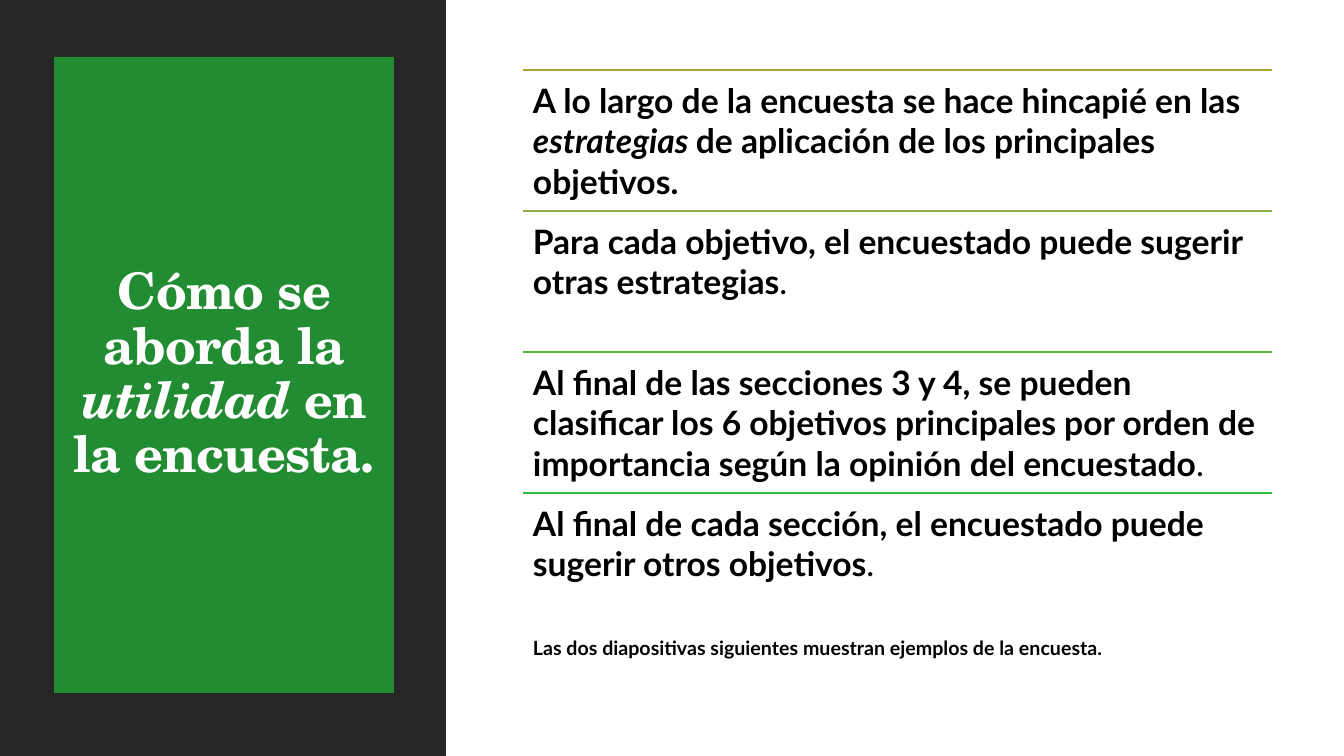
"""Builds the slide on how the survey deals with usefulness."""
from lxml import etree
from pptx import Presentation
from pptx.dml.color import RGBColor
from pptx.enum.shapes import MSO_CONNECTOR, MSO_SHAPE
from pptx.enum.text import MSO_ANCHOR, PP_ALIGN
from pptx.oxml.ns import qn
from pptx.util import Emu, Pt

RECT = MSO_SHAPE.RECTANGLE
LINE = MSO_CONNECTOR.STRAIGHT
TOP, MIDDLE = MSO_ANCHOR.TOP, MSO_ANCHOR.MIDDLE
LEFT, CENTER = PP_ALIGN.LEFT, PP_ALIGN.CENTER

SIZE = (1344, 756)
PANEL = ((0, 0, 446, 756), "262626")
CARD = ((54, 57, 340, 636), "228C32")
TITLE = [("Cómo se aborda la ", "b"), ("utilidad ", "bi"), ("en la encuesta.", "b")]
ROWS = [
    ("AEA33A", [("A lo largo de la encuesta se hace hincapié en las ", "b"),
                ("estrategias ", "bi"),
                ("de aplicación de los principales objetivos.", "b")]),
    ("8CAB4A", [("Para cada objetivo, el encuestado puede sugerir otras estrategias", "b"),
                (".", "")]),
    ("57B636", [("Al final de las secciones 3 y 4, se pueden clasificar los 6 objetivos "
                 "principales por orden de importancia según la opinión del encuestado", "b"),
                (".", "")]),
    ("2EBA43", [("Al final de cada sección, el encuestado puede sugerir otros objetivos", "b"),
                (".", "")]),
]
NOTE = [("Las dos diapositivas siguientes muestran ejemplos de la encuesta.", "b")]
ROW_X, ROW_Y, ROW_W, ROW_H = 523, 70, 749, 141
PAD = 10

HEAD = {"name": "TeX Gyre Schola", "size": Pt(36), "color": "FFFFFF"}
BODY = {"name": "Lato", "size": Pt(24), "color": "000000"}
SMALL = {**BODY, "size": Pt(14)}


def px(n):
    return Emu(round(n * 914400 / 100.8))


def paint(color, code):
    color.rgb = RGBColor.from_string(code)


def assign(obj, form):
    for key, val in form.items():
        setattr(obj, key, val)


def write(para, runs, font, form):
    assign(para, form)
    for text, style in runs:
        run = para.add_run()
        run.text = text
        look = {**font, "bold": "b" in style, "italic": "i" in style}
        paint(run.font.color, look.pop("color"))
        assign(run.font, look)


def frame(shape, anchor):
    text = shape.text_frame
    assign(text, {"word_wrap": True, "vertical_anchor": anchor,
                  **{"margin_" + side: px(PAD) for side in ("left", "top", "right", "bottom")}})
    return text


def block(slide, box, code):
    shape = slide.shapes.add_shape(RECT, *map(px, box))
    shape.shadow.inherit = False
    shape.fill.solid()
    paint(shape.fill.fore_color, code)
    shape.line.fill.background()
    return shape


def rule(slide, y, code):
    line = slide.shapes.add_connector(LINE, px(ROW_X), px(y), px(ROW_X + ROW_W), px(y))
    line.line.width = Pt(1.25)
    paint(line.line.color, code)
    etree.SubElement(line._element.spPr, qn("a:effectLst"))


def main():
    deck = Presentation()
    deck.slide_width, deck.slide_height = map(px, SIZE)
    slide = deck.slides.add_slide(deck.slide_layouts[6])

    block(slide, *PANEL)
    title = frame(block(slide, *CARD), MIDDLE).paragraphs[0]
    write(title, TITLE, HEAD, {"alignment": CENTER, "line_spacing": 0.9})
    for run in title.runs:
        run._r.get_or_add_rPr().set("spc", "-50")

    for i, (code, runs) in enumerate(ROWS):
        y = ROW_Y + i * ROW_H
        rule(slide, y, code)
        last = i == len(ROWS) - 1
        high = ROW_H + 59 if last else ROW_H
        box = slide.shapes.add_textbox(*map(px, (ROW_X, y, ROW_W, high)))
        text = frame(box, TOP)
        write(text.paragraphs[0], runs, BODY, {"alignment": LEFT})
        if last:
            write(text.add_paragraph(), NOTE, SMALL, {"alignment": LEFT, "space_before": Pt(37)})

    deck.save("out.pptx")


if __name__ == "__main__":
    main()
